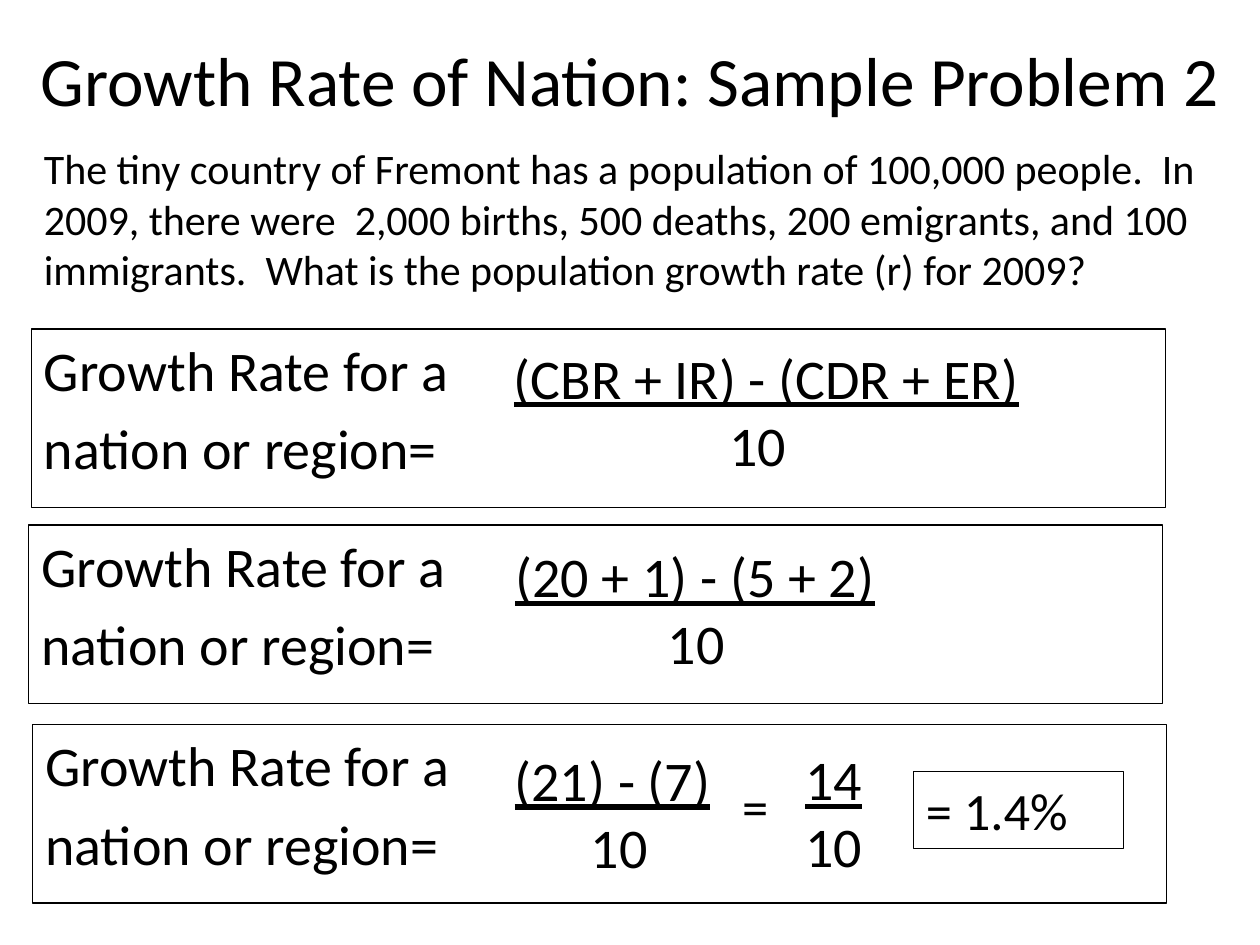
from pptx import Presentation
from pptx.dml.color import RGBColor
from pptx.enum.shapes import MSO_SHAPE
from pptx.enum.text import MSO_ANCHOR, PP_ALIGN
from pptx.util import Pt

RECTANGLE = MSO_SHAPE.RECTANGLE
TOP, MIDDLE = MSO_ANCHOR.TOP, MSO_ANCHOR.MIDDLE
LEFT, CENTER = PP_ALIGN.LEFT, PP_ALIGN.CENTER
TITLE_ONLY = 5


def color(hex_string):
    return RGBColor.from_string(hex_string)


def write(paragraph, text, *, font, ink, size, align=LEFT, underline=False,
          before=0, indent=0):
    paragraph.alignment = align
    paragraph.space_before = Pt(before)
    if indent:
        properties = paragraph._p.get_or_add_pPr()
        properties.set("marL", str(Pt(indent)))
        properties.set("indent", "0")
    run = paragraph.add_run()
    run.text = text
    run.font.name = font
    run.font.size = Pt(size)
    run.font.underline = underline
    run.font.color.rgb = color(ink)


class ProblemSlide:
    font = "Calibri"
    ink = "000000"
    formula_size = 32

    def __init__(self, slide):
        self.slide = slide

    def fill_text(self, shape, lines, anchor=TOP):
        """Each line is its text and a dict of its format."""
        frame = shape.text_frame
        frame.word_wrap = True
        frame.vertical_anchor = anchor
        for number, (text, style) in enumerate(lines):
            paragraph = frame.add_paragraph() if number else frame.paragraphs[0]
            write(paragraph, text, font=self.font, ink=self.ink, **style)

    def title(self, text, left, top, width, height, size):
        heading = self.slide.shapes.title
        heading.left, heading.top = Pt(left), Pt(top)
        heading.width, heading.height = Pt(width), Pt(height)
        self.fill_text(heading, [(text, dict(size=size, align=CENTER))], MIDDLE)

    def text(self, lines, left, top, width, height):
        box = self.slide.shapes.add_textbox(Pt(left), Pt(top), Pt(width), Pt(height))
        self.fill_text(box, lines)

    def frame(self, lines, left, top, width, height):
        box = self.slide.shapes.add_shape(
            RECTANGLE, Pt(left), Pt(top), Pt(width), Pt(height))
        box.shadow.inherit = False
        box.fill.background()
        box.line.color.rgb = color(self.ink)
        box.line.width = Pt(0.75)
        self.fill_text(box, lines)

    def growth_rate(self, left, top):
        style = dict(size=self.formula_size, before=self.formula_size * 0.2)
        self.frame([("Growth Rate for a", style), ("nation or region=", style)],
                   left, top, 648, 102)

    def fraction(self, numerator, left, top, width, denominator_indent,
                 numerator_indent=0):
        size = self.formula_size
        self.text([(numerator, dict(size=size, underline=True, indent=numerator_indent)),
                   ("10", dict(size=size, indent=denominator_indent))],
                  left, top, width, 85)


def main():
    presentation = Presentation()
    presentation.slide_width, presentation.slide_height = Pt(720), Pt(540)
    layout = presentation.slide_layouts[TITLE_ONLY]
    problem = ProblemSlide(presentation.slides.add_slide(layout))

    # Problem statement
    problem.title("Growth Rate of Nation: Sample Problem 2", 12, 12, 696, 66, 39.6)
    question = ("The tiny country of Fremont has a population of 100,000 people.  "
                "In 2009, there were  2,000 births, 500 deaths, 200 emigrants, and "
                "100 immigrants.  What is the population growth rate (r) for 2009?")
    problem.text([(question, dict(size=24))], 18, 78, 684, 94)

    # Formula, substitution and simplification
    steps = [
        ("(CBR + IR) - (CDR + ER)", 18, 188, 286.5, 192.5, 331, 123),
        ("(20 + 1) - (5 + 2)", 16.5, 300, 287.5, 306, 230, 87),
        ("(21) - (7)", 18.7, 414, 287, 422.5, 130, 43.5),
    ]
    for numerator, left, top, fraction_left, fraction_top, width, indent in steps:
        problem.growth_rate(left, top)
        problem.fraction(numerator, fraction_left, fraction_top, width, indent)

    # Result
    problem.text([("=", dict(size=30))], 417, 439, 30, 44)
    problem.fraction("14", 417, 422, 87, 36, numerator_indent=36)
    problem.frame([("= 1.4%", dict(size=30))], 522, 441, 120, 44)

    presentation.save("out.pptx")


if __name__ == "__main__":
    main()
